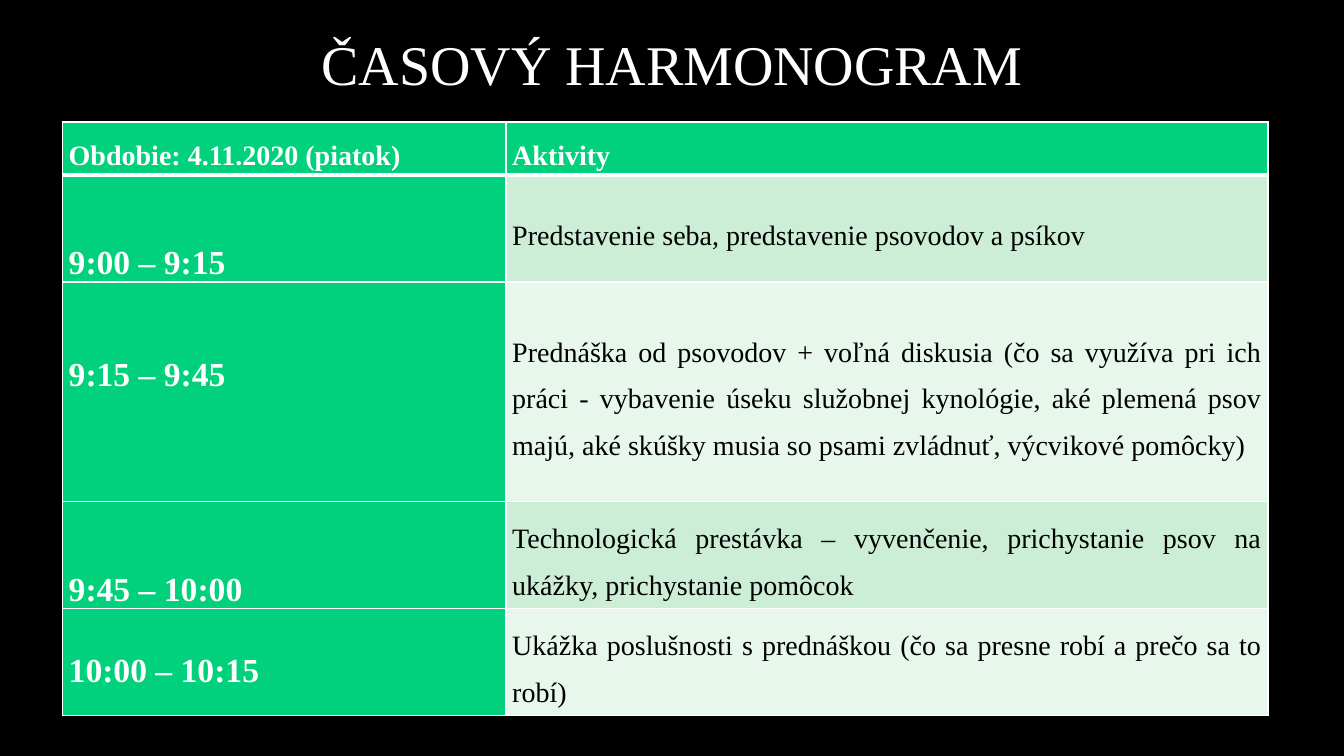
from lxml import etree
from pptx import Presentation
from pptx.dml.color import RGBColor
from pptx.enum.text import MSO_ANCHOR, PP_ALIGN
from pptx.oxml.ns import qn
from pptx.util import Pt

TOP, MIDDLE, BOTTOM = MSO_ANCHOR.TOP, MSO_ANCHOR.MIDDLE, MSO_ANCHOR.BOTTOM
CENTER, JUSTIFY = PP_ALIGN.CENTER, PP_ALIGN.JUSTIFY

FONT = "Times New Roman"
BLACK, WHITE = "000000", "FFFFFF"
GREEN, BANDS = "01D17D", ("CCEED7", "E7F7EC")

COL_WIDTHS = (316.8, 544.3)
HEADER = ("Obdobie: 4.11.2020 (piatok) ", "Aktivity")
HEADER_HEIGHT = 38
# Row height, time, anchor of the time, bottom margin of the time, activity
SCHEDULE = (
    (76.4, "9:00 – 9:15", BOTTOM, 0,
     "Predstavenie seba, predstavenie psovodov a psíkov"),
    (156.6, "9:15 – 9:45", MIDDLE, 37.6,
     "Prednáška od psovodov + voľná diskusia (čo sa využíva pri ich práci - "
     "vybavenie úseku služobnej kynológie, aké plemená psov majú, aké skúšky "
     "musia so psami zvládnuť, výcvikové pomôcky)"),
    (76.4, "9:45 – 10:00", BOTTOM, 0,
     "Technologická prestávka – vyvenčenie, prichystanie psov na ukážky, "
     "prichystanie pomôcok"),
    (76.4, "10:00 – 10:15", MIDDLE, 0,
     "Ukážka poslušnosti s prednáškou (čo sa presne robí a prečo sa to robí)"),
)


def rgb(color):
    return RGBColor.from_string(color)


def write(tf, text, size=20, color=WHITE, bold=False, align=JUSTIFY, spacing=1.5):
    tf.word_wrap = True
    p = tf.paragraphs[0]
    p.alignment = align
    p.line_spacing = spacing
    r = p.add_run()
    r.text = text
    r.font.name = FONT
    r.font.size = Pt(size)
    r.font.bold = bold
    r.font.color.rgb = rgb(color)


def set_borders(cell, bottom=1, top=1):
    """Draw white borders; they must precede the fill in the cell properties."""
    tc_pr = cell._tc.get_or_add_tcPr()
    widths = {"a:lnL": 1, "a:lnR": 1, "a:lnT": top, "a:lnB": bottom}
    for tag, width in widths.items():
        ln = etree.SubElement(tc_pr, qn(tag), w=str(Pt(width)))
        fill = etree.SubElement(ln, qn("a:solidFill"))
        etree.SubElement(fill, qn("a:srgbClr"), val=WHITE)


def format_cell(cell, text, fill, anchor=MIDDLE, margin_bottom=0,
                top=1, bottom=1, **text_format):
    set_borders(cell, bottom, top)
    cell.fill.solid()
    cell.fill.fore_color.rgb = rgb(fill)
    cell.vertical_anchor = anchor
    cell.margin_left = cell.margin_right = Pt(4.5)
    cell.margin_top = 0
    cell.margin_bottom = Pt(margin_bottom)
    write(cell.text_frame, text, **text_format)


def add_title(s, x, y, w, h):
    title = s.shapes.title
    title.left, title.top, title.width, title.height = Pt(x), Pt(y), Pt(w), Pt(h)
    title.text_frame.vertical_anchor = MIDDLE
    write(title.text_frame, "ČASOVÝ HARMONOGRAM", size=40, align=CENTER, spacing=0.9)


def add_schedule(s, x, y):
    heights = [HEADER_HEIGHT] + [row[0] for row in SCHEDULE]
    table = s.shapes.add_table(len(heights), len(COL_WIDTHS), Pt(x), Pt(y),
                               Pt(sum(COL_WIDTHS)), Pt(sum(heights))).table
    for column, width in zip(table.columns, COL_WIDTHS):
        column.width = Pt(width)
    for row, height in zip(table.rows, heights):
        row.height = Pt(height)

    for col, text in enumerate(HEADER):
        format_cell(table.cell(0, col), text, GREEN, bottom=3, bold=True)
    for i, (_, time, anchor, margin, activity) in enumerate(SCHEDULE):
        top = 3 if i == 0 else 1
        format_cell(table.cell(i + 1, 0), time, GREEN, anchor, margin, top,
                    size=24, bold=True)
        format_cell(table.cell(i + 1, 1), activity, BANDS[i % 2], top=top,
                    color=BLACK)


def main():
    prs = Presentation()
    prs.slide_width, prs.slide_height = Pt(960), Pt(540)
    s = prs.slides.add_slide(prs.slide_layouts[5])
    s.background.fill.solid()
    s.background.fill.fore_color.rgb = rgb(BLACK)
    add_title(s, 141, 18, 678, 60)
    add_schedule(s, 44.6, 87.1)
    prs.save("out.pptx")


if __name__ == "__main__":
    main()
